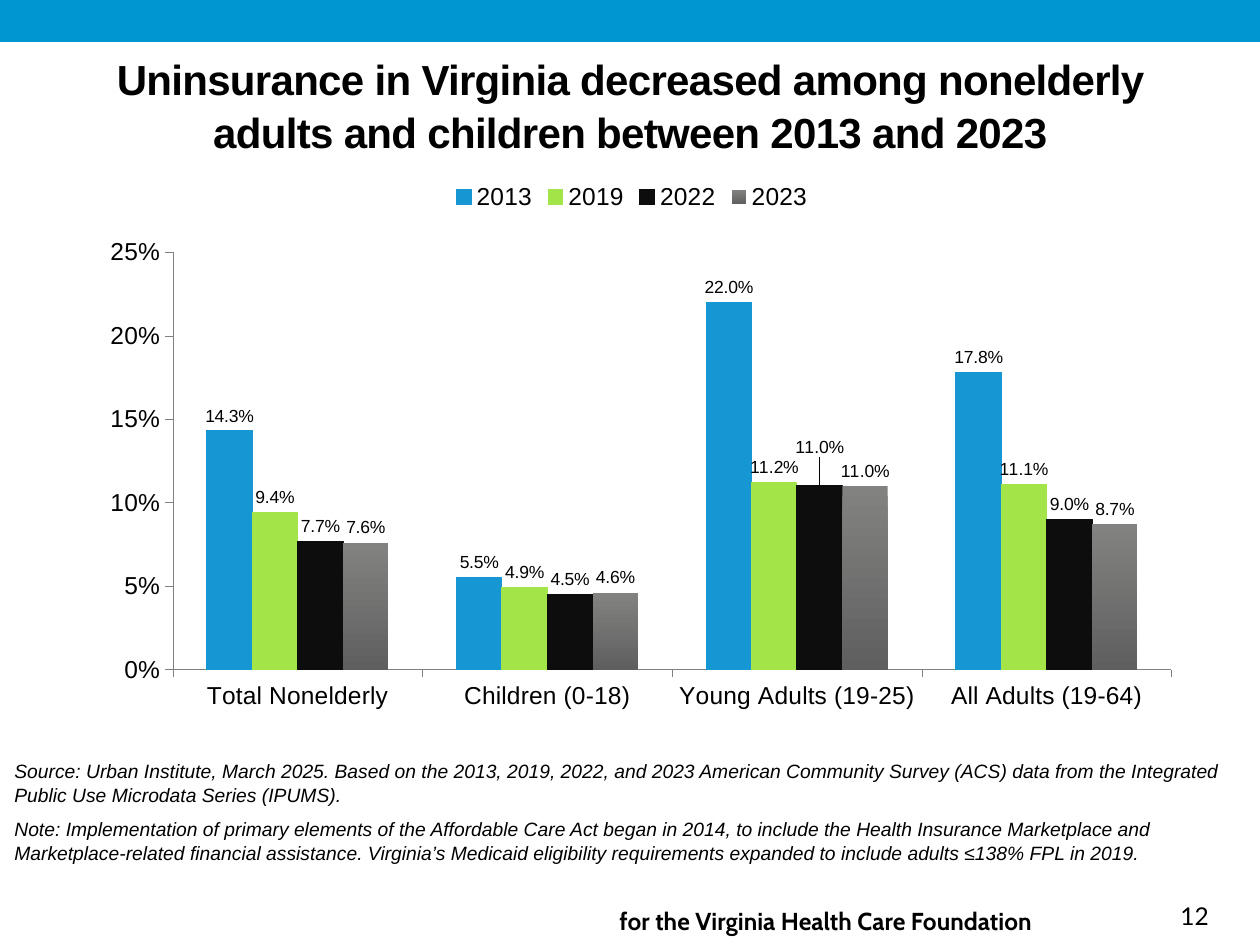
from lxml import etree
from pptx import Presentation
from pptx import util as u
from pptx.chart import data as cd
from pptx.dml.color import RGBColor
from pptx.enum import chart as ch, shapes, text
from pptx.oxml import ns

BLUE = RGBColor(0x00, 0x96, 0xD2)
BLACK = RGBColor(0x00, 0x00, 0x00)
AXIS = RGBColor(0x80, 0x80, 0x80)
GREY_TOP = RGBColor(0x82, 0x83, 0x81)
GREY_BOTTOM = RGBColor(0x5F, 0x5F, 0x5F)
SERIES_FILLS = [RGBColor(0x16, 0x96, 0xD2), RGBColor(0xA3, 0xE4, 0x48), RGBColor(0x0D, 0x0D, 0x0D)]

CATEGORIES = ["Total Nonelderly", "Children (0-18)", "Young Adults (19-25)", "All Adults (19-64)"]
RATES = {
    "2013": [0.143, 0.055, 0.22, 0.178],
    "2019": [0.094, 0.049, 0.112, 0.111],
    "2022": [0.077, 0.045, 0.11, 0.09],
    "2023": [0.076, 0.046, 0.11, 0.087],
}
TITLE = "Uninsurance in Virginia decreased among nonelderly adults and children between 2013 and 2023"
NOTES = [
    "Source: Urban Institute, March 2025. Based on the 2013, 2019, 2022, and 2023 American Community "
    "Survey (ACS) data from the Integrated Public Use Microdata Series (IPUMS).",
    "Note: Implementation of primary elements of the Affordable Care Act began in 2014, to include the "
    "Health Insurance Marketplace and Marketplace-related financial assistance. Virginia’s Medicaid "
    "eligibility requirements expanded to include adults ≤138% FPL in 2019.",
]


def px(n):
    return u.Emu(round(n * 914400 / 126))


def box(x, y, w, h):
    return px(x), px(y), px(w), px(h)


def style_font(font, size, name="Arial", bold=False, italic=False):
    font.size, font.name, font.bold, font.italic = u.Pt(size), name, bold, italic
    font.color.rgb = BLACK


def write(tf, paragraphs, size, align=text.PP_ALIGN.LEFT, spacing=1.0, gap=0, track=None, **fmt):
    tf.word_wrap = True
    tf.vertical_anchor = text.MSO_ANCHOR.TOP
    for i, words in enumerate(paragraphs):
        p = tf.add_paragraph() if i else tf.paragraphs[0]
        p.alignment, p.line_spacing = align, spacing
        p.space_before = u.Pt(gap if i else 0)
        r = p.add_run()
        r.text = words
        style_font(r.font, size, **fmt)
        if track:
            r.font._element.set("spc", str(track))


def manual_layout(**values):
    layout = etree.Element(ns.qn("c:layout"))
    manual = etree.SubElement(layout, ns.qn("c:manualLayout"))
    for tag, value in values.items():
        etree.SubElement(manual, ns.qn("c:" + tag)).set("val", str(value))
    return layout


class Deck:
    def __init__(self, width, height):
        self.prs = Presentation()
        self.prs.slide_width, self.prs.slide_height = px(width), px(height)
        self.s = self.prs.slides.add_slide(self.prs.slide_layouts[5])

    def title(self, words, *place):
        sp = self.s.shapes.title
        sp.left, sp.top, sp.width, sp.height = box(*place)
        tf = sp.text_frame
        tf.margin_left = tf.margin_right = tf.margin_top = tf.margin_bottom = 0
        tf.auto_size = text.MSO_AUTO_SIZE.NONE
        write(tf, [words], 24, text.PP_ALIGN.CENTER, spacing=1.05, track=-40, bold=True)

    def band(self, color, *place):
        sp = self.s.shapes.add_shape(shapes.MSO_SHAPE.RECTANGLE, *box(*place))
        sp.shadow.inherit = False
        sp.fill.solid()
        sp.fill.fore_color.rgb = color
        sp.line.fill.background()

    def text(self, paragraphs, place, size, **fmt):
        sp = self.s.shapes.add_textbox(*box(*place))
        write(sp.text_frame, paragraphs, size, **fmt)

    def column_chart(self, categories, rates, *place):
        data = cd.CategoryChartData(number_format="0.0%")
        data.categories = categories
        for name, values in rates.items():
            data.add_series(name, values)
        frame = self.s.shapes.add_chart(ch.XL_CHART_TYPE.COLUMN_CLUSTERED, *box(*place), data)
        chart = frame.chart
        chart.has_title = False
        style_font(chart.font, 14)
        chart.has_legend = True
        chart.legend.position = ch.XL_LEGEND_POSITION.TOP
        chart.legend.include_in_layout = False
        for axis in (chart.category_axis, chart.value_axis):
            axis.has_major_gridlines = False
            axis.major_tick_mark = ch.XL_TICK_MARK.OUTSIDE
            axis.minor_tick_mark = ch.XL_TICK_MARK.NONE
            axis.format.line.color.rgb = AXIS
            axis.format.line.width = u.Pt(0.25)
        axis = chart.value_axis
        axis.minimum_scale, axis.maximum_scale, axis.major_unit = 0, 0.25, 0.05
        axis.tick_labels.number_format = "0%"
        axis.tick_labels.number_format_is_linked = False
        plot = chart.plots[0]
        plot.gap_width, plot.overlap, plot.vary_by_categories = 150, 0, False
        for i, series in enumerate(plot.series):
            series.invert_if_negative = False
            self.fill_series(series, i)
            labels = series.data_labels
            labels.show_value = True
            labels.number_format, labels.number_format_is_linked = "0.0%", False
            labels.position = ch.XL_LABEL_POSITION.OUTSIDE_END
            style_font(labels.font, 10)
        area = chart._chartSpace.chart.plotArea
        for old in area.findall(ns.qn("c:layout")):
            area.remove(old)
        area.insert(0, manual_layout(layoutTarget="inner", xMode="edge", yMode="edge",
                                     x=0.1, y=0.14, w=0.87, h=0.7))
        return chart

    def fill_series(self, series, i):
        fill = series.format.fill
        if i < len(SERIES_FILLS):
            fill.solid()
            fill.fore_color.rgb = SERIES_FILLS[i]
            series.format.line.color.rgb = SERIES_FILLS[i]
            series.format.line.width = u.Pt(0.5)
        else:
            fill.gradient()
            fill.gradient_angle = 270
            for stop, color in zip(fill.gradient_stops, (GREY_TOP, GREY_BOTTOM)):
                stop.color.rgb = color
            series.format.line.fill.background()

    def raise_label(self, series, point, shift):
        label = series.points[point].data_label
        style_font(label.font, 10)
        label.position = ch.XL_LABEL_POSITION.OUTSIDE_END
        item = series._element.find(".//" + ns.qn("c:dLbl"))
        item.insert(1, manual_layout(x=0, y=-shift))
        fmt = etree.Element(ns.qn("c:numFmt"), formatCode="0.0%", sourceLinked="0")
        item.insert(2, fmt)


def main():
    deck = Deck(1260, 945)
    deck.band(BLUE, 0, 0, 1260, 42)
    chart = deck.column_chart(CATEGORIES, RATES, 58, 169, 1148, 596)
    deck.raise_label(chart.plots[0].series[2], 2, 0.04)
    deck.title(TITLE, 63, 51, 1134, 179)
    deck.text(NOTES, (2, 752, 1260, 117), 11, spacing=1.05, gap=5.5, italic=True)
    deck.text(["for the Virginia Health Care Foundation"], (607, 900, 611, 33), 14, name="Cabin", bold=True)
    deck.text(["12"], (1168, 895, 92, 43), 14, name="Lato")
    deck.prs.save("out.pptx")


if __name__ == "__main__":
    main()
